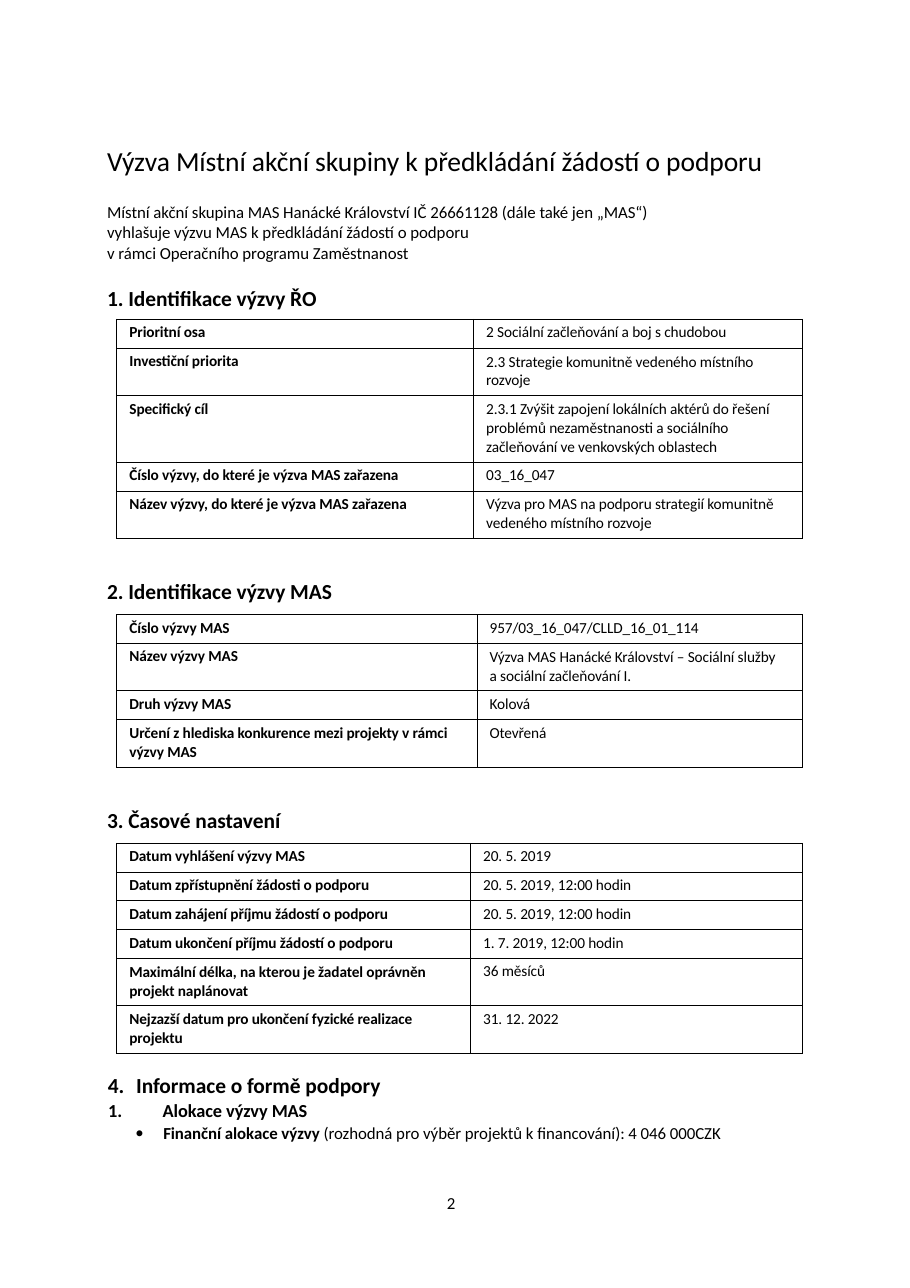
from dataclasses import dataclass

from lxml.etree import SubElement
from pptx import Presentation
from pptx.dml.color import RGBColor
from pptx.oxml import parse_xml
from pptx.oxml.ns import nsdecls, qn
from pptx.util import Pt


@dataclass
class Theme:
    font: str = "Calibri"
    ink: str = "000000"
    title: float = 18
    head: float = 14
    sub: float = 12
    body: float = 11
    cell: float = 10
    track: str = "-5"
    rule: float = 0.5


theme = Theme()
LEFT = 70


def write(para, text, size=theme.body, bold=False, before=0, line=None):
    """Add text to a paragraph; a newline in it becomes a line break."""
    if before:
        para.space_before = Pt(before)
    if line:
        para.line_spacing = line
    for i, part in enumerate(text.split("\n")):
        if i:
            para.add_line_break()
        run = para.add_run()
        run.text = part
        font = run.font
        font.name, font.size, font.bold = theme.font, Pt(size), bold
        font.color.rgb = RGBColor.from_string(theme.ink)
        run._r.get_or_add_rPr().set("spc", theme.track)


def frame(left, top, width, height):
    """Add a text box and return its text frame."""
    box = slide.shapes.add_textbox(Pt(left), Pt(top), Pt(width), Pt(height))
    text = box.text_frame
    text.word_wrap = True
    text.margin_left = text.margin_right = text.margin_bottom = 0
    text.margin_top = Pt(0.9)
    return text


deck = Presentation()
deck.slide_width, deck.slide_height = Pt(594.72), Pt(841.68)
slide = deck.slides.add_slide(deck.slide_layouts[6])

# Title
title = frame(LEFT, 93, 440, 24)
write(title.paragraphs[0], "Výzva Místní akční skupiny k předkládání žádostí o podporu",
      size=theme.title)

# Introduction and first heading
intro = frame(LEFT, 130.5, 400, 73)
write(intro.paragraphs[0],
      "Místní akční skupina MAS Hanácké Království IČ 26661128 (dále také jen „MAS“)\n"
      "vyhlašuje výzvu MAS k předkládání žádostí o podporu", line=1.02)
write(intro.add_paragraph(), "v rámci Operačního programu Zaměstnanost", before=0.2)
write(intro.add_paragraph(), "1. Identifikace výzvy ŘO",
      size=theme.head, bold=True, before=14.5)

# Headings of the next two sections
for text, top in (("2. Identifikace výzvy MAS", 376.6), ("3. Časové nastavení", 526.3)):
    write(frame(LEFT, top, 200, 19).paragraphs[0], text, size=theme.head, bold=True)

# Tables: top, width of the first column, rows
tables = [
    (208.7, 233.2, [
        ("Prioritní osa", "2 Sociální začleňování a boj s chudobou"),
        ("Investiční priorita", "2.3 Strategie komunitně vedeného místního\nrozvoje"),
        ("Specifický cíl",
         "2.3.1 Zvýšit zapojení lokálních aktérů do řešení\n"
         "problémů nezaměstnanosti a sociálního\n"
         "začleňování ve venkovských oblastech"),
        ("Číslo výzvy, do které je výzva MAS zařazena", "03_16_047"),
        ("Název výzvy, do které je výzva MAS zařazena",
         "Výzva pro MAS na podporu strategií komunitně\nvedeného místního rozvoje"),
    ]),
    (401.5, 235.4, [
        ("Číslo výzvy MAS", "957/03_16_047/CLLD_16_01_114"),
        ("Název výzvy MAS",
         "Výzva MAS Hanácké Království – Sociální služby\na sociální začleňování I."),
        ("Druh výzvy MAS", "Kolová"),
        ("Určení z hlediska konkurence mezi projekty v rámci\nvýzvy MAS", "Otevřená"),
    ]),
    (551, 231.2, [
        ("Datum vyhlášení výzvy MAS", "20. 5. 2019"),
        ("Datum zpřístupnění žádosti o podporu", "20. 5. 2019, 12:00 hodin"),
        ("Datum zahájení příjmu žádostí o podporu", "20. 5. 2019, 12:00 hodin"),
        ("Datum ukončení příjmu žádostí o podporu", "1. 7. 2019, 12:00 hodin"),
        ("Maximální délka, na kterou je žadatel oprávněn\nprojekt naplánovat", "36 měsíců"),
        ("Nejzazší datum pro ukončení fyzické realizace\nprojektu", "31. 12. 2022"),
    ]),
]
WIDTH = 448

for top, first, rows in tables:
    # A row grows by one step for each further line
    tall = [18.8 + 12.3 * max(text.count("\n") for text in row) for row in rows]
    grid = slide.shapes.add_table(len(rows), 2, Pt(76.3), Pt(top),
                                  Pt(WIDTH), Pt(sum(tall))).table
    grid.first_row = grid.horz_banding = False
    grid.columns[0].width, grid.columns[1].width = Pt(first), Pt(WIDTH - first)
    for r, row in enumerate(rows):
        grid.rows[r].height = Pt(tall[r])
        for c, text in enumerate(row):
            cell = grid.cell(r, c)
            cell.fill.background()
            cell.margin_left, cell.margin_top = Pt(8.3), Pt(2.7)
            cell.margin_right = cell.margin_bottom = 0
            write(cell.text_frame.paragraphs[0], text, size=theme.cell,
                  bold=c == 0, line=1.02 if "\n" in text else None)
            for i, side in enumerate("LRTB"):
                cell._tc.get_or_add_tcPr().insert(i, parse_xml(
                    f'<a:ln{side} {nsdecls("a")} w="{Pt(theme.rule)}"><a:solidFill>'
                    f'<a:srgbClr val="{theme.ink}"/></a:solidFill></a:ln{side}>'))

# Form of support: level, indent, hang, bullet, size, space before, runs
items = [
    (0, 19, 18.5, ("buAutoNum", {"type": "arabicPeriod", "startAt": "4"}), theme.head, 0,
     [("Informace o formě podpory", True)]),
    (1, 36.3, 35.6, ("buAutoNum", {"type": "arabicPeriod"}), theme.sub, 0.5,
     [("Alokace výzvy MAS", True)]),
    (2, 36.7, 18.2, ("buChar", {"char": "•"}), theme.body, 0.8,
     [("Finanční alokace výzvy ", True),
      ("(rozhodná pro výběr projektů k financování): 4 046 000CZK", False)]),
]
form = frame(LEFT, 700, 420, 48)
for level, indent, hang, (tag, attrs), size, before, runs in items:
    para = form.add_paragraph() if level else form.paragraphs[0]
    para.level = level
    props = para._p.get_or_add_pPr()
    props.set("marL", str(Pt(indent)))
    props.set("indent", str(Pt(-hang)))
    SubElement(props, qn("a:buFont"), typeface=theme.font)
    SubElement(props, qn(f"a:{tag}"), attrs)
    tabs = SubElement(props, qn("a:tabLst"))
    SubElement(tabs, qn("a:tab"), pos=str(Pt(indent)), algn="l")
    for text, bold in runs:
        write(para, text, size=size, bold=bold, before=before)

# Page number
page = frame(292, 780, 15, 13)
write(page.paragraphs[0], "2", line=Pt(11.5))

deck.save("out.pptx")
